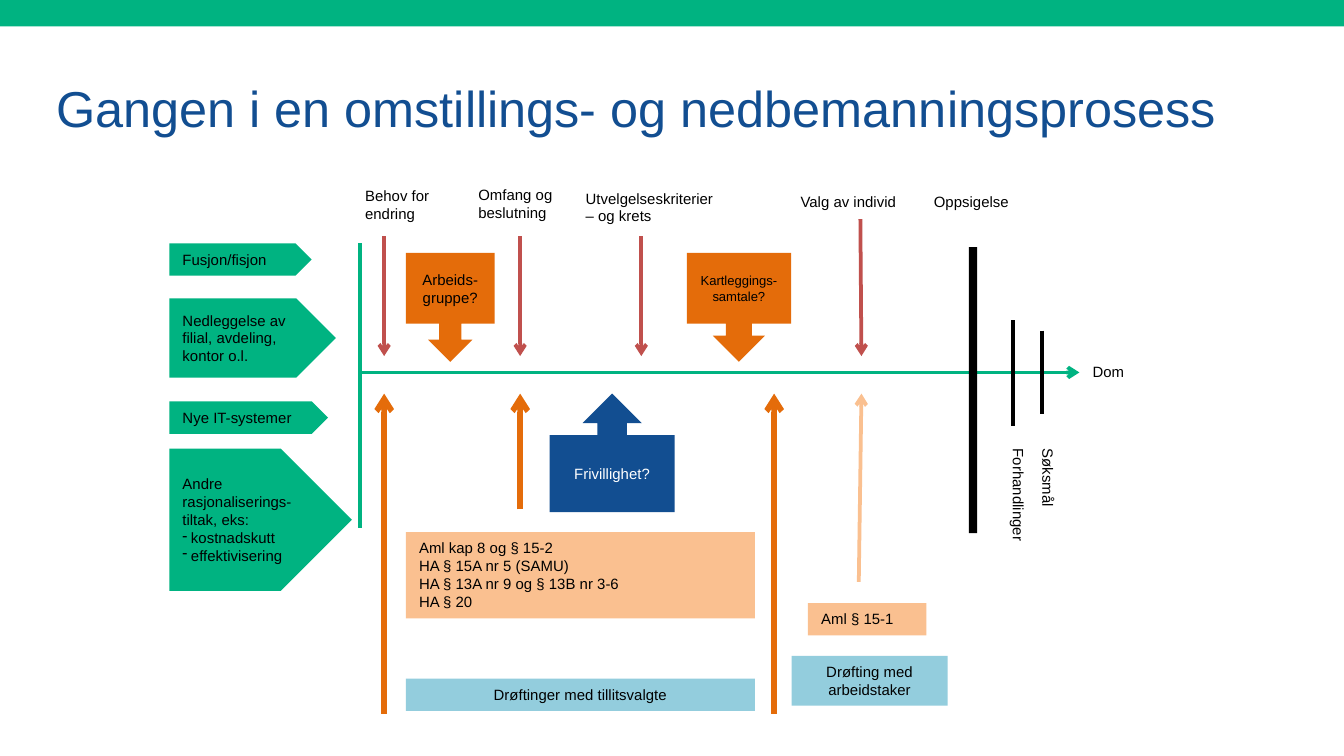
"""Build a one-slide timeline of a restructuring and downsizing process."""
import pptx
import pptx.util
import pptx.dml.color
import pptx.enum.shapes
import pptx.enum.text
import pptx.oxml
import pptx.oxml.ns
from dataclasses import dataclass

Cm = pptx.util.Cm
SHAPE = pptx.enum.shapes.MSO_SHAPE
ALIGN = pptx.enum.text.PP_ALIGN
ANCHOR = pptx.enum.text.MSO_ANCHOR


@dataclass(frozen=True)
class Theme:
    font: str = "Arial"
    green: str = "00B381"
    navy: str = "124E91"
    orange: str = "E46C0A"
    peach: str = "FAC090"
    blue: str = "93CDDD"
    red: str = "C0504D"
    black: str = "000000"
    white: str = "FFFFFF"
    title_size: int = 27
    body_size: int = 8
    small_size: int = 7
    thin: int = 2
    thick: int = 3


THEME = Theme()
SLIDE_WIDTH, SLIDE_HEIGHT = 25.4, 14.29
AXIS_LEFT, AXIS_RIGHT, AXIS_Y = 6.81, 20.4, 7.04
ABOVE_AXIS, BELOW_AXIS = 6.73, 7.44
CAUSE_LEFT, BOX_LEFT, BOX_WIDTH = 3.2, 7.67, 6.6
ONE_LINE, TWO_LINES = 0.61, 0.94

TITLE = "Gangen i en omstillings- og nedbemanningsprosess"

STEP_LABELS = [
    ("Behov for endring", (6.65, 3.4, 2.08, TWO_LINES)),
    ("Omfang og beslutning", (8.79, 3.38, 2.79, TWO_LINES)),
    ("Utvelgelseskriterier – og krets", (10.82, 3.45, 3.07, TWO_LINES)),
    ("Valg av individ", (14.88, 3.51, 2.79, ONE_LINE)),
    ("Oppsigelse", (17.4, 3.51, 2.16, ONE_LINE)),
    ("Dom", (AXIS_RIGHT, 6.73, 1.42, ONE_LINE)),
]
VERTICAL_LABELS = [("Forhandlinger", 18.69), ("Søksmål", 19.25)]

CAUSES = [
    (["Fusjon/fisjon"], 4.6, 2.69, ONE_LINE),
    (["Nedleggelse av", "filial, avdeling,", "kontor o.l."], 5.64, 3.15, 1.5),
    (["Nye IT-systemer"], 7.59, 3.0, ONE_LINE),
    (["Andre rasjonaliserings-", "tiltak, eks:", "- kostnadskutt", "- effektivisering"],
     8.48, 3.45, 2.69),
]

CALLOUTS = [
    (["Arbeids-gruppe?"], SHAPE.DOWN_ARROW_CALLOUT, (BOX_LEFT, 4.78, 1.68, 2.06),
     THEME.orange, THEME.black, THEME.body_size),
    (["Kartleggings-", "samtale?"], SHAPE.DOWN_ARROW_CALLOUT, (12.98, 4.78, 1.97, 2.06),
     THEME.orange, THEME.black, THEME.small_size),
    (["Frivillighet?"], SHAPE.UP_ARROW_CALLOUT, (10.39, BELOW_AXIS, 2.36, 2.24),
     THEME.navy, THEME.white, THEME.body_size),
]

LEGAL_BOXES = [
    (["Aml kap 8 og § 15-2", "HA § 15A nr 5 (SAMU)", "HA § 13A nr 9 og § 13B nr 3-6", "HA § 20"],
     (BOX_LEFT, 10.06, BOX_WIDTH, 1.63)),
    (["Aml § 15-1"], (15.27, 11.4, 2.24, ONE_LINE)),
]
DISCUSSION_BOXES = [
    (["Drøftinger med tillitsvalgte"], (BOX_LEFT, 12.83, BOX_WIDTH, ONE_LINE)),
    (["Drøfting med arbeidstaker"], (14.96, 12.4, 2.95, TWO_LINES)),
]

STEP_ARROWS = [(7.26, 4.47, 7.26), (9.83, 4.47, 9.83), (12.12, 4.47, 12.12), (16.26, 4.14, 16.28)]
DISCUSSION_ARROWS = [(7.26, 13.49), (9.83, 9.63), (14.63, 13.49)]
COURT_POSTS = [(19.15, 6.05, 8.05), (19.69, 6.25, 7.82)]
DISMISSAL_BAR = (18.31, 4.67, 0.16, 5.41)


def rgb(color):
    return pptx.dml.color.RGBColor.from_string(color)


def write_text(frame, lines, *, size=THEME.body_size, color=THEME.black,
               align=ALIGN.LEFT, anchor=ANCHOR.TOP, vertical=False):
    frame.word_wrap = True
    frame.vertical_anchor = anchor
    if vertical:
        frame._txBody.bodyPr.set("vert", "vert")
    for index, line in enumerate(lines):
        paragraph = frame.paragraphs[0] if index == 0 else frame.add_paragraph()
        paragraph.alignment = align
        if line.startswith("- "):
            properties = paragraph._p.get_or_add_pPr()
            properties.set("marL", str(Cm(0.16)))
            properties.set("indent", str(-Cm(0.16)))
            bullet = pptx.oxml.parse_xml(f'<a:buChar {pptx.oxml.ns.nsdecls("a")} char="-"/>')
            properties.append(bullet)
            line = line[2:]
        run = paragraph.add_run()
        run.text = line
        run.font.name = THEME.font
        run.font.size = pptx.util.Pt(size)
        run.font.color.rgb = rgb(color)


def add_filled_shape(slide, kind, box, fill, lines=(), **text_format):
    shape = slide.shapes.add_shape(kind, *map(Cm, box))
    shape.shadow.inherit = False
    shape.fill.solid()
    shape.fill.fore_color.rgb = rgb(fill)
    shape.line.fill.background()
    write_text(shape.text_frame, lines, **text_format)


def add_label(slide, text, box, **text_format):
    label = slide.shapes.add_textbox(*map(Cm, box))
    write_text(label.text_frame, [text], **text_format)


def add_line(slide, start, end, color, width=THEME.thin, arrow=False):
    connector = slide.shapes.add_connector(
        pptx.enum.shapes.MSO_CONNECTOR.STRAIGHT, *map(Cm, (*start, *end)))
    connector.line.color.rgb = rgb(color)
    connector.line.width = pptx.util.Pt(width)
    namespace = pptx.oxml.ns.nsdecls("a")
    if arrow:
        head = pptx.oxml.parse_xml(f'<a:tailEnd {namespace} type="arrow"/>')
        connector.line._get_or_add_ln().append(head)
    connector._element.spPr.append(pptx.oxml.parse_xml(f"<a:effectLst {namespace}/>"))


def add_title(slide):
    title = slide.shapes.title
    title.left, title.top, title.width, title.height = map(Cm, (0.81, 0, 23.47, 2.72))
    write_text(title.text_frame, [TITLE], size=THEME.title_size, color=THEME.navy,
               anchor=ANCHOR.BOTTOM)


def add_lines(slide):
    origin = (AXIS_LEFT, AXIS_Y)
    add_line(slide, origin, (AXIS_RIGHT, AXIS_Y), THEME.green, arrow=True)
    for end in (4.6, 9.98):
        add_line(slide, origin, (AXIS_LEFT, end), THEME.green)
    for x, top, tip in STEP_ARROWS:
        add_line(slide, (x, top), (tip, ABOVE_AXIS), THEME.red, arrow=True)
    for x, bottom in DISCUSSION_ARROWS:
        add_line(slide, (x, bottom), (x, BELOW_AXIS), THEME.orange, THEME.thick, arrow=True)
    add_line(slide, (16.23, 11), (16.28, BELOW_AXIS), THEME.peach, arrow=True)
    for x, top, bottom in COURT_POSTS:
        add_line(slide, (x, top), (x, bottom), THEME.black)


def add_boxes(slide):
    add_filled_shape(slide, SHAPE.RECTANGLE, DISMISSAL_BAR, THEME.black)
    for lines, top, width, height in CAUSES:
        add_filled_shape(slide, SHAPE.PENTAGON, (CAUSE_LEFT, top, width, height), THEME.green,
                         lines, anchor=ANCHOR.MIDDLE)
    for lines, kind, box, fill, color, size in CALLOUTS:
        add_filled_shape(slide, kind, box, fill, lines, color=color, size=size,
                         align=ALIGN.CENTER, anchor=ANCHOR.MIDDLE)
    for lines, box in LEGAL_BOXES:
        add_filled_shape(slide, SHAPE.RECTANGLE, box, THEME.peach, lines)
    for lines, box in DISCUSSION_BOXES:
        add_filled_shape(slide, SHAPE.RECTANGLE, box, THEME.blue, lines, align=ALIGN.CENTER)


def main():
    presentation = pptx.Presentation()
    presentation.slide_width, presentation.slide_height = Cm(SLIDE_WIDTH), Cm(SLIDE_HEIGHT)
    slide = presentation.slides.add_slide(presentation.slide_layouts[5])
    add_filled_shape(slide, SHAPE.RECTANGLE, (0, 0, SLIDE_WIDTH, 0.5), THEME.green)
    add_title(slide)
    add_lines(slide)
    add_boxes(slide)
    for text, box in STEP_LABELS:
        add_label(slide, text, box)
    for text, left in VERTICAL_LABELS:
        add_label(slide, text, (left, 8.23, 0.86, 2.77), vertical=True)
    presentation.save("out.pptx")


if __name__ == "__main__":
    main()
